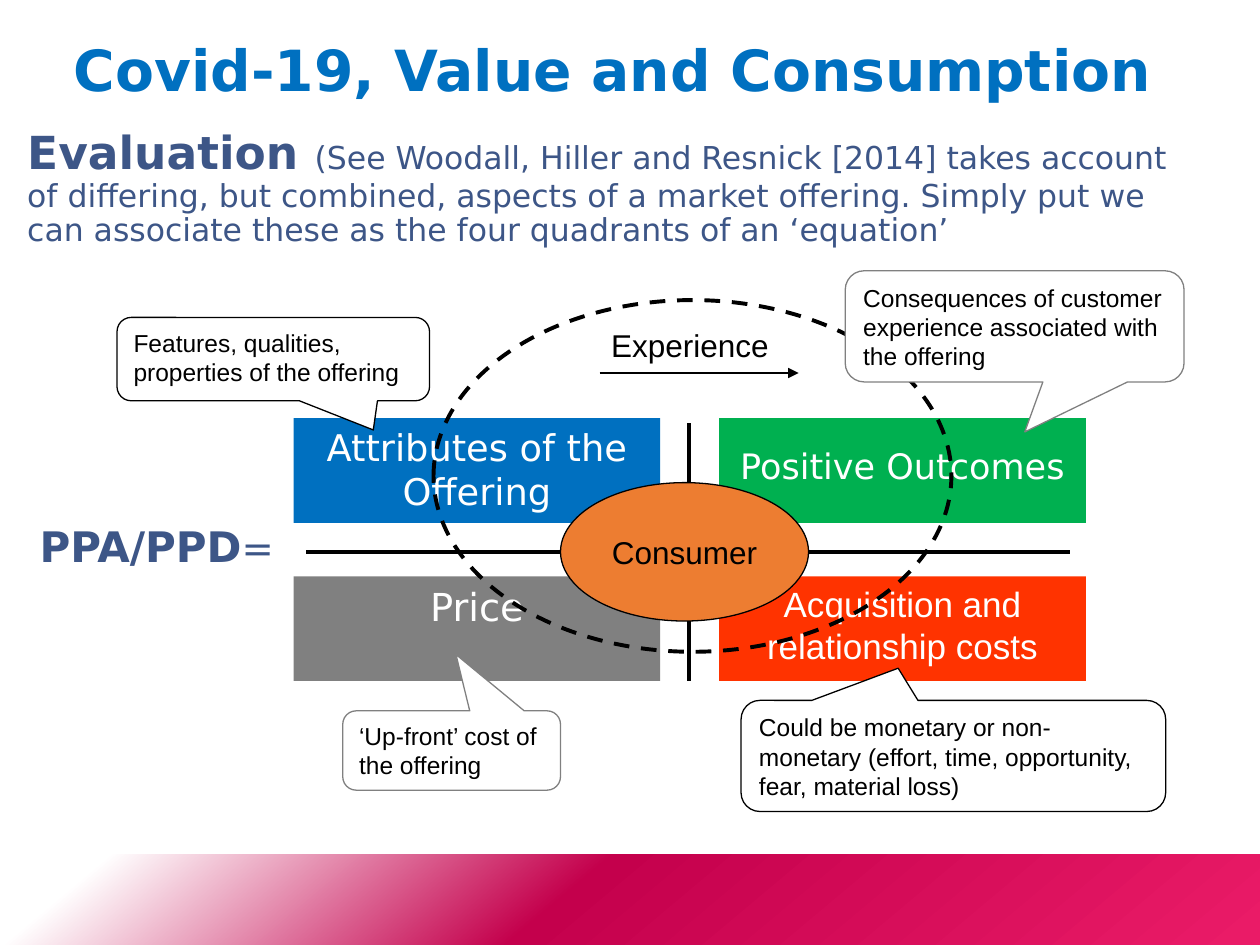
from copy import deepcopy

from pptx import Presentation
from pptx.dml.color import RGBColor as Rgb
from pptx.enum.dml import MSO_LINE as Dash
from pptx.enum.shapes import MSO_CONNECTOR as Link, MSO_SHAPE as Geo
from pptx.enum.text import MSO_ANCHOR as Anchor, PP_ALIGN as Align
from pptx.oxml import parse_xml
from pptx.oxml.ns import nsdecls, qn
from pptx.util import Cm, Pt

HUE = {
    "black": "000000", "white": "FFFFFF", "grey": "808080", "blue": "0070C0",
    "navy": "3D5687", "green": "00B050", "red": "FF3300", "orange": "ED7D31",
    "wine": "C4004C", "pink": "EA1B67",
}
SANS, ARIAL = "DejaVu Sans", "Arial"


def rgb(hue):
    return Rgb.from_string(HUE[hue])


def put(item, **vals):
    for name, val in vals.items():
        setattr(item, name, val)


class Deck:
    """Hold the drawing style and the current slide."""

    def __init__(self, wide, high):
        self.file = Presentation()
        put(self.file, slide_width=Cm(wide), slide_height=Cm(high))
        self.slide = self.file.slides.add_slide(self.file.slide_layouts[6])

    def label(self, shape, runs, font=SANS, frame=None, para=None):
        text = shape.text_frame
        put(text, **{"word_wrap": True, "vertical_anchor": Anchor.TOP, **(frame or {})})
        line = text.paragraphs[0]
        put(line, **{"alignment": Align.LEFT, **(para or {})})
        for words, size, hue, bold in runs:
            run = line.add_run()
            run.text = words
            put(run.font, name=font, size=Pt(size), bold=bold)
            run.font.color.rgb = rgb(hue)

    def text(self, box, runs, **style):
        self.label(self.slide.shapes.add_textbox(*map(Cm, box)), runs, **style)

    def shape(self, kind, box, fill=None, edge=None, width=0.75):
        shape = self.slide.shapes.add_shape(kind, *map(Cm, box))
        shape.shadow.inherit = False
        if fill:
            shape.fill.solid()
            shape.fill.fore_color.rgb = rgb(fill)
        else:
            shape.fill.background()
        if edge:
            shape.line.color.rgb = rgb(edge)
            shape.line.width = Pt(width)
        else:
            shape.line.fill.background()
        return shape

    def band(self, box, stops, angle):
        shape = self.shape(Geo.RECTANGLE, box)
        shape.fill.gradient()
        shape.fill.gradient_angle = angle
        marks = shape._element.spPr.find(".//" + qn("a:gsLst"))
        marks.append(deepcopy(marks[0]))
        for stop, (spot, hue) in zip(shape.fill.gradient_stops, stops):
            stop.position = spot
            stop.color.rgb = rgb(hue)

    def line(self, ends, width, arrow=False):
        link = self.slide.shapes.add_connector(Link.STRAIGHT, *map(Cm, ends))
        link.line.color.rgb = rgb("black")
        link.line.width = Pt(width)
        if arrow:
            head = f'<a:tailEnd {nsdecls("a")} type="triangle"/>'
            link._element.spPr.find(qn("a:ln")).append(parse_xml(head))
        link._element.spPr.append(parse_xml(f'<a:effectLst {nsdecls("a")}/>'))

    def block(self, box, fill, words, size, font=SANS, top=0.13):
        shape = self.shape(Geo.RECTANGLE, box, fill)
        self.label(shape, [(words, size, "white", False)], font,
                   {"margin_top": Cm(top)}, {"alignment": Align.CENTER})

    def oval(self, box, words, size):
        shape = self.shape(Geo.OVAL, box, "orange", "black")
        self.label(shape, [(words, size, "black", False)], ARIAL,
                   {"vertical_anchor": Anchor.MIDDLE}, {"alignment": Align.CENTER})

    def ring(self, box):
        shape = self.shape(Geo.OVAL, box, None, "black", 2.25)
        shape.line.dash_style = Dash.DASH

    def note(self, box, tip, edge, words):
        shape = self.shape(Geo.ROUNDED_RECTANGULAR_CALLOUT, box, "white", edge)
        for spot, val in enumerate((*tip, 0.17)):
            shape.adjustments[spot] = val
        self.label(shape, [(words, 14, "black", False)], ARIAL)


def main():
    deck = Deck(25.4, 19.05)
    deck.band((0, 17.22, 25.4, 1.83),
              [(0.08, "white"), (0.45, "wine"), (0.99, "pink")], 310)
    tight = {"line_spacing": 0.9}
    deck.text((1.24, 0.23, 22.66, 2.49),
              [("Covid-19, Value and Consumption", 32.4, "blue", True)],
              frame={"vertical_anchor": Anchor.MIDDLE}, para=tight)
    deck.text((0.3, 2.51, 23.6, 2.9), [
        ("Evaluation ", 26, "navy", True),
        ("(See Woodall, Hiller and Resnick [2014] takes account of differing, "
         "but combined, aspects of a market offering. Simply put we can "
         "associate these as the four quadrants of an ‘equation’", 18, "navy", False),
    ], para=tight)
    deck.text((0.55, 10.36, 5.3, 1.1),
              [("PPA/PPD", 24, "navy", True), ("=", 22, "navy", False)])

    deck.line((6.17, 11.13, 21.56, 11.13), 2.25)
    left, right, upper, lower = 5.92, 14.5, 8.43, 11.62
    size = 7.39, 2.11
    deck.block((right, upper, *size), "green", "Positive Outcomes", 20, top=0.53)
    deck.block((left, upper, *size), "blue", "Attributes of the Offering", 21)
    deck.block((left, lower, *size), "grey", "Price", 22)
    deck.block((right, lower, *size), "red", "Acquisition and relationship costs",
               20, ARIAL)
    deck.line((13.89, 8.53, 13.89, 13.72), 2.25)
    deck.ring((8.74, 6.05, 10.44, 7.09))
    deck.line((12.09, 7.52, 16.1, 7.52), 1.5, True)
    deck.oval((11.3, 9.73, 5, 2.79), "Consumer", 18)

    for box, tip, edge, words in (
        ((2.36, 6.4, 6.3, 1.68), (0.32, 0.85), "black",
         "Features, qualities, properties of the offering"),
        ((17.04, 5.46, 6.83, 2.24), (0.03, 0.95), "grey",
         "Consequences of customer experience associated with the offering"),
        ((14.94, 14.12, 8.56, 2.24), (-0.13, -0.79), "black",
         "Could be monetary or non-monetary (effort, time, opportunity, "
         "fear, material loss)"),
        ((6.91, 14.33, 4.39, 1.6), (0.02, -1.21), "grey",
         "‘Up-front’ cost of the offering"),
    ):
        deck.note(box, tip, edge, words)
    deck.text((12.07, 6.45, 3.81, 1.02), [("Experience", 18, "black", False)],
              font=ARIAL)
    deck.file.save("out.pptx")


if __name__ == "__main__":
    main()
